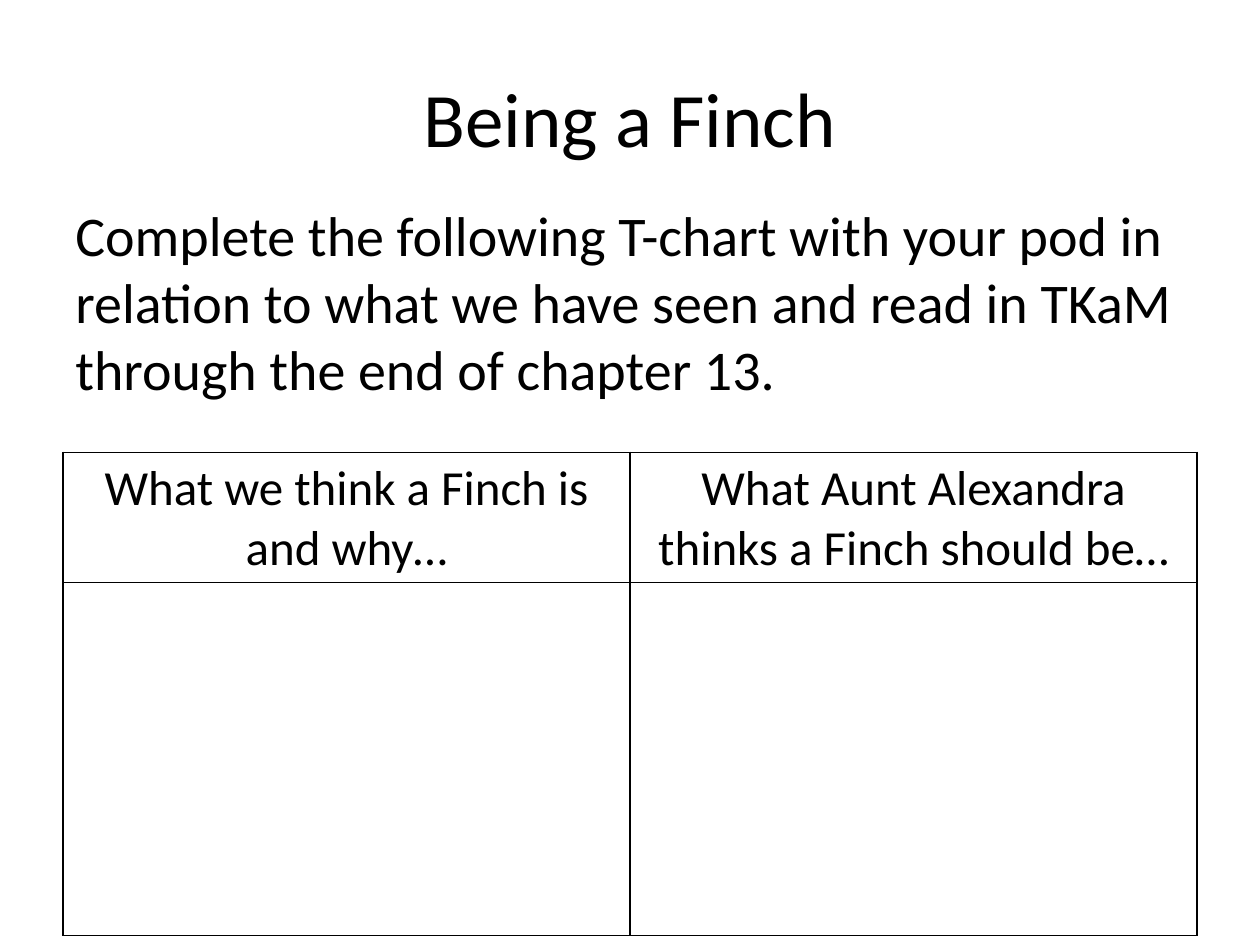
from dataclasses import dataclass
from lxml import etree
from pptx import Presentation
from pptx import util as u
from pptx.dml.color import RGBColor
from pptx.enum import text
from pptx.oxml.ns import qn


@dataclass
class Theme:
    font: str = "Calibri"
    ink: str = "000000"
    title: int = 44
    body: int = 32
    head: int = 28
    line: float = 1


class Deck:
    def __init__(self, theme):
        self.theme = theme
        self.prs = Presentation()
        self.prs.slide_width = u.Inches(10)
        self.prs.slide_height = u.Inches(7.5)
        self.slide = self.prs.slides.add_slide(self.prs.slide_layouts[6])

    def style(self, frame, size, align):
        for para in frame.paragraphs:
            para.alignment = align
            for run in para.runs:
                run.font.name = self.theme.font
                run.font.size = u.Pt(size)
                run.font.color.rgb = RGBColor.from_string(self.theme.ink)

    def label(self, words, box, size, align, anchor, before=0):
        frame = self.slide.shapes.add_textbox(*map(u.Inches, box)).text_frame
        frame.word_wrap = True
        frame.vertical_anchor = anchor
        frame.text = words
        frame.paragraphs[0].space_before = u.Pt(before)
        self.style(frame, size, align)

    def border(self, cell):
        props = cell._tc.get_or_add_tcPr()
        for n, side in enumerate(("lnL", "lnR", "lnT", "lnB")):
            line = etree.Element(qn(f"a:{side}"), w=str(u.Pt(self.theme.line)))
            fill = etree.SubElement(line, qn("a:solidFill"))
            etree.SubElement(fill, qn("a:srgbClr"), val=self.theme.ink)
            props.insert(n, line)

    def table(self, heads, box, heights):
        grid = self.slide.shapes.add_table(
            len(heights), len(heads), *map(u.Inches, box)).table
        grid.first_row = grid.horz_banding = False
        for row, high in zip(grid.rows, heights):
            row.height = u.Inches(high)
        for cell, words in zip(grid.rows[0].cells, heads):
            cell.text = words
            cell.vertical_anchor = text.MSO_ANCHOR.BOTTOM
            self.style(cell.text_frame, self.theme.head, text.PP_ALIGN.CENTER)
        for cell in grid.iter_cells():
            cell.fill.background()
            self.border(cell)


def main():
    theme = Theme()
    deck = Deck(theme)
    left, wide = 0.5, 9

    # Title
    deck.label("Being a Finch", (left, 0.3, wide, 1.25), theme.title,
               text.PP_ALIGN.CENTER, text.MSO_ANCHOR.MIDDLE)

    # Task
    deck.label("Complete the following T-chart with your pod in relation to "
               "what we have seen and read in TKaM through the end of "
               "chapter 13.", (left, 1.54, wide, 4.95), theme.body,
               text.PP_ALIGN.LEFT, text.MSO_ANCHOR.TOP, before=6.4)

    # T-chart
    heights = (0.87, 2.8)
    deck.table(("What we think a Finch is and why…",
                "What Aunt Alexandra thinks a Finch should be…"),
               (left, 3.59, wide, sum(heights)), heights)

    deck.prs.save("out.pptx")


if __name__ == "__main__":
    main()
